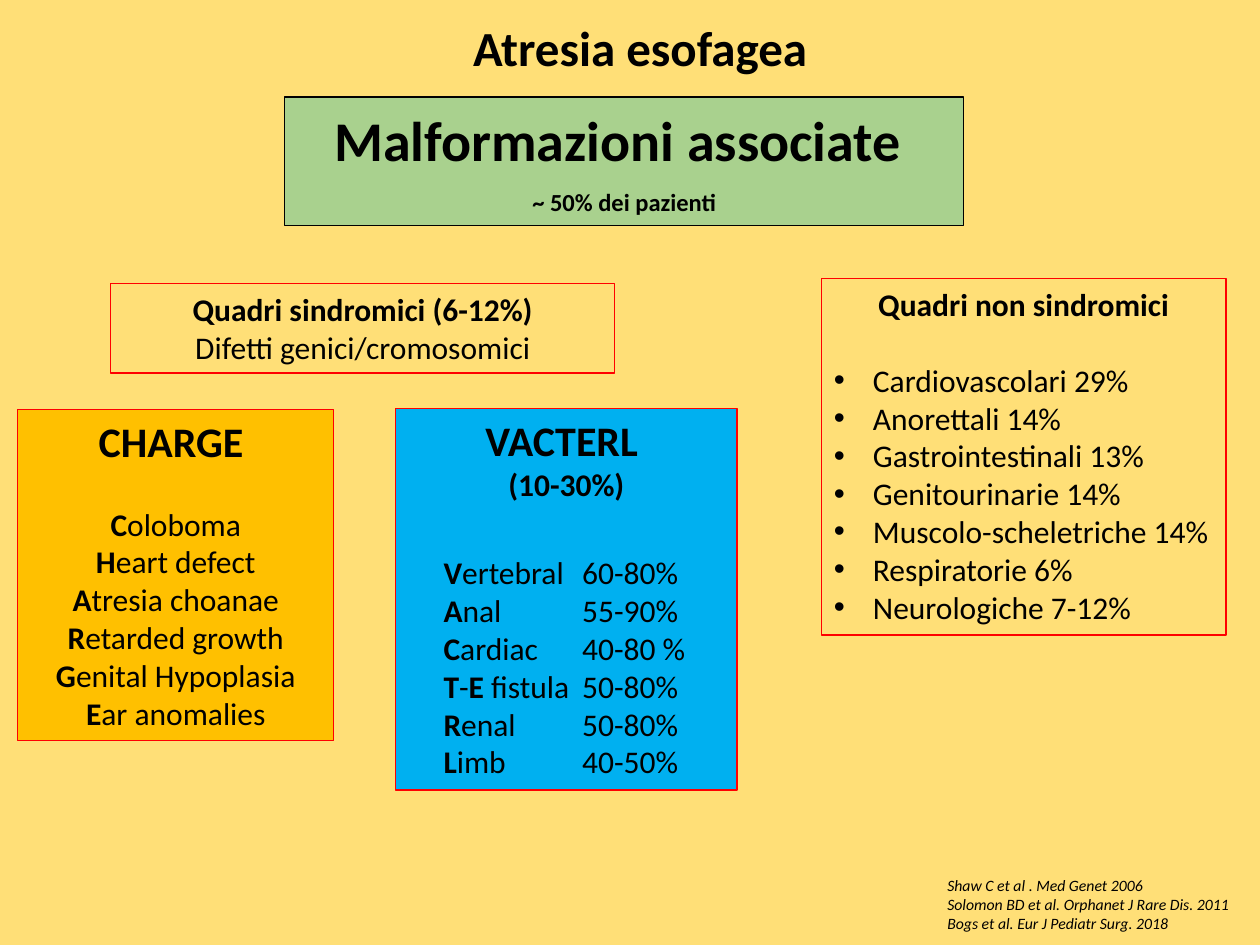
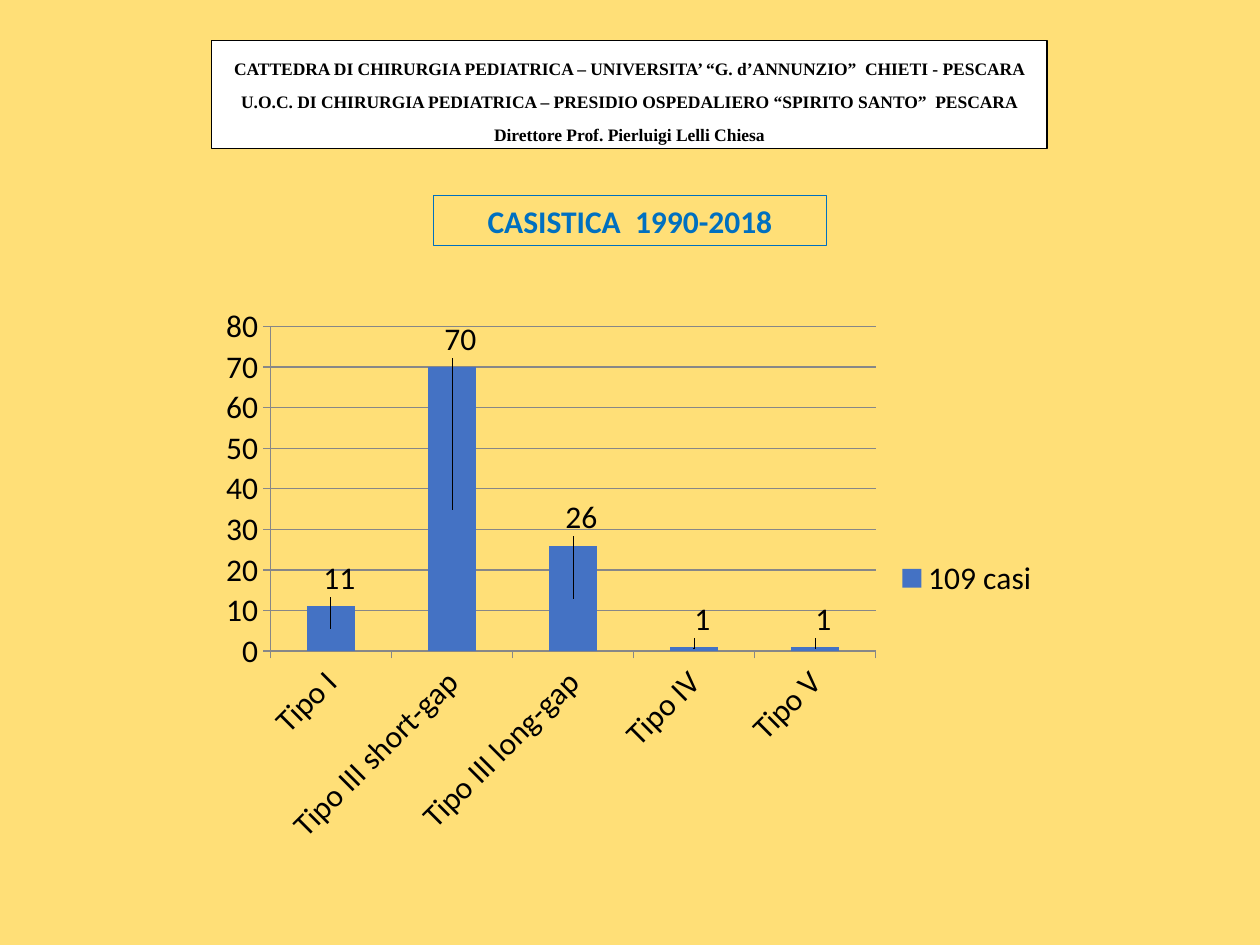
from lxml.etree import SubElement
from pptx import Presentation
from pptx.chart.data import CategoryChartData
from pptx.dml.color import RGBColor
from pptx.enum.chart import XL_CHART_TYPE, XL_LABEL_POSITION, XL_LEGEND_POSITION
from pptx.enum.shapes import MSO_SHAPE
from pptx.enum.text import MSO_ANCHOR, PP_ALIGN
from pptx.oxml import parse_xml
from pptx.oxml.ns import nsdecls, qn
from pptx.util import Inches, Pt

COLORS = {
    "background": "FFDF77",
    "text": "000000",
    "green": "A9D18E",
    "red": "FF0000",
    "sky": "00B0F0",
    "amber": "FFC000",
    "blue": "0070C0",
    "white": "FFFFFF",
    "bar": "4472C4",
    "axis": "878787",
}
BODY_FONT = "Calibri"

HEADING = {"bold": True}
LARGE_HEADING = {"bold": True, "size": 24}
BULLET_INDENT = 0.31
VALUE_TAB = 1.1

# Letters between asterisks are bold.
CHARGE_ITEMS = ["*C*oloboma", "*H*eart defect", "*A*tresia choanae",
                "*R*etarded growth", "*G*enital Hypoplasia", "*E*ar anomalies"]
VACTERL_ITEMS = [
    ("*V*ertebral", "60-80%"),
    ("*A*nal", "55-90%"),
    ("*C*ardiac", "40-80 %"),
    ("*T*-*E* fistula", "50-80%"),
    ("*R*enal", "50-80%"),
    ("*L*imb", "40-50%"),
]
NON_SYNDROMIC_ITEMS = ["Cardiovascolari 29%", "Anorettali 14%", "Gastrointestinali 13%",
                       "Genitourinarie 14%", "Muscolo-scheletriche 14%",
                       "Respiratorie 6%", "Neurologiche 7-12%"]
REFERENCES = ["Shaw C et al . Med Genet 2006",
              "Solomon BD et al. Orphanet J Rare Dis. 2011",
              "Bogs et al. Eur J Pediatr Surg. 2018"]
DEPARTMENT_LINES = [
    "CATTEDRA DI CHIRURGIA PEDIATRICA – UNIVERSITA’ “G. d’ANNUNZIO”  CHIETI - PESCARA",
    "U.O.C. DI CHIRURGIA PEDIATRICA – PRESIDIO OSPEDALIERO “SPIRITO SANTO”  PESCARA",
    "Direttore Prof. Pierluigi Lelli Chiesa",
]
CASES = {"Tipo I": 11, "Tipo III short-gap": 70, "Tipo III long-gap": 26,
         "Tipo IV": 1, "Tipo V": 1}


def item_list(items, gap, **style):
    """Give every item the style, and the first one a gap above it."""
    return [(item, {**style, "before": 0 if index else gap})
            for index, item in enumerate(items)]


MALFORMATION_BOXES = [
    {"at": (2.26, 0.77, 5.39, 1.02), "fill": "green", "line": "text", "top": 0.07,
     "paragraphs": [("Malformazioni associate ", {"bold": True, "size": 32}),
                    ("~ 50% dei pazienti", {"bold": True, "size": 14, "before": 8})]},
    {"at": (2.79, 0.09, 4.58, 0.57),
     "paragraphs": [("Atresia esofagea", {"bold": True, "size": 28})]},
    {"at": (0.88, 2.25, 4, 0.71), "line": "red",
     "paragraphs": [("Quadri sindromici (6-12%)", HEADING),
                    ("Difetti genici/cromosomici", {})]},
    {"at": (6.52, 2.21, 3.21, 2.83), "line": "red",
     "paragraphs": [("Quadri non sindromici", HEADING)]
     + item_list(NON_SYNDROMIC_ITEMS, 22, align=PP_ALIGN.LEFT, bullet=True)},
    {"at": (7.42, 6.9, 2.53, 0.56),
     "paragraphs": item_list(REFERENCES, 0, align=PP_ALIGN.LEFT, size=9, italic=True)},
    {"at": (3.14, 3.24, 2.71, 3.03), "fill": "sky", "line": "red", "side": 0.38,
     "paragraphs": [("VACTERL ", LARGE_HEADING), ("(10-30%)", HEADING)]
     + item_list(["\t".join(row) for row in VACTERL_ITEMS], 29,
                 align=PP_ALIGN.LEFT, tab=VALUE_TAB)},
    {"at": (0.14, 3.25, 2.51, 2.63), "fill": "amber", "line": "red",
     "paragraphs": [("CHARGE ", LARGE_HEADING)] + item_list(CHARGE_ITEMS, 22)},
]
CASE_BOXES = [
    {"at": (3.44, 1.55, 3.12, 0.4), "line": "blue", "anchor": MSO_ANCHOR.MIDDLE,
     "paragraphs": [("CASISTICA  1990-2018", {"bold": True, "color": "blue"})]},
    {"at": (1.68, 0.32, 6.63, 0.86), "fill": "white", "line": "text",
     "paragraphs": item_list(DEPARTMENT_LINES, 0, bold=True, size=10,
                             font="Times New Roman", spacing=1.56)},
]
CHART_AT = (1.68, 2.37, 6.67, 4.44)
PLOT_AREA = {"x": 0.07, "y": 0.05, "w": 0.72, "h": 0.58}
AXIS_MAXIMUM = 80
LABEL_SHIFT = 0.01
LABEL_GAP = 0.05


def color(name):
    return RGBColor.from_string(COLORS[name])


def set_attributes(target, values):
    for name, value in values.items():
        setattr(target, name, value)


def write_paragraph(paragraph, text, style):
    set_attributes(paragraph, {
        "alignment": style.get("align", PP_ALIGN.CENTER),
        "space_before": Pt(style.get("before", 0)),
        "line_spacing": style.get("spacing", 1.0),
    })
    properties = paragraph._p.get_or_add_pPr()
    if style.get("bullet"):
        indent = Inches(BULLET_INDENT)
        properties.set("marL", str(indent))
        properties.set("indent", str(-indent))
        SubElement(properties, qn("a:buFont"), typeface="Arial")
        SubElement(properties, qn("a:buChar"), char="•")
    if "tab" in style:
        tabs = SubElement(properties, qn("a:tabLst"))
        SubElement(tabs, qn("a:tab"), pos=str(Inches(style["tab"])), algn="l")
    for index, piece in enumerate(text.split("*")):
        if not piece:
            continue
        run = paragraph.add_run()
        run.text = piece
        set_attributes(run.font, {
            "name": style.get("font", BODY_FONT),
            "size": Pt(style.get("size", 18)),
            "bold": style.get("bold", False) or index % 2 == 1,
            "italic": style.get("italic", False),
        })
        run.font.color.rgb = color(style.get("color", "text"))


def add_box(slide, box):
    place = [Inches(length) for length in box["at"]]
    if "line" in box:
        shape = slide.shapes.add_shape(MSO_SHAPE.RECTANGLE, *place)
        shape.shadow.inherit = False
        shape.line.color.rgb = color(box["line"])
        shape.line.width = Pt(0.75)
        if "fill" in box:
            shape.fill.solid()
            shape.fill.fore_color.rgb = color(box["fill"])
        else:
            shape.fill.background()
    else:
        shape = slide.shapes.add_textbox(*place)
    frame = shape.text_frame
    side = Inches(box.get("side", 0.1))
    set_attributes(frame, {
        "word_wrap": True,
        "vertical_anchor": box.get("anchor", MSO_ANCHOR.TOP),
        "margin_left": side,
        "margin_right": side,
        "margin_top": Inches(box.get("top", 0.05)),
        "margin_bottom": Inches(0.05),
    })
    for index, (text, style) in enumerate(box["paragraphs"]):
        paragraph = frame.add_paragraph() if index else frame.paragraphs[0]
        write_paragraph(paragraph, text, style)


def manual_layout(values, inner=False):
    target = '<c:layoutTarget val="inner"/>' if inner else ""
    modes = '<c:xMode val="edge"/><c:yMode val="edge"/>' if inner else ""
    sizes = "".join(f'<c:{name} val="{value}"/>' for name, value in values.items())
    return parse_xml(f'<c:layout {nsdecls("c")}><c:manualLayout>'
                     f"{target}{modes}{sizes}</c:manualLayout></c:layout>")


def add_case_chart(slide):
    data = CategoryChartData()
    data.categories = list(CASES)
    data.add_series("109 casi", list(CASES.values()))
    place = [Inches(length) for length in CHART_AT]
    chart = slide.shapes.add_chart(XL_CHART_TYPE.COLUMN_STACKED, *place, data).chart
    set_attributes(chart.font, {"name": BODY_FONT, "size": Pt(18)})
    chart.font.color.rgb = color("text")
    chart.has_title = False
    chart.has_legend = True
    set_attributes(chart.legend, {"position": XL_LEGEND_POSITION.RIGHT,
                                  "include_in_layout": False})

    set_attributes(chart.value_axis, {"minimum_scale": 0, "maximum_scale": AXIS_MAXIMUM,
                                      "major_unit": 10, "has_major_gridlines": True})
    for line in (chart.value_axis.format.line, chart.category_axis.format.line,
                 chart.value_axis.major_gridlines.format.line):
        line.color.rgb = color("axis")
        line.width = Pt(0.75)
    chart.category_axis.tick_labels.font.size = Pt(18)
    category_text = chart.element.find(f'.//{qn("c:catAx")}/{qn("c:txPr")}/{qn("a:bodyPr")}')
    category_text.set("rot", str(-45 * 60000))

    plot = chart.plots[0]
    set_attributes(plot, {"gap_width": 150, "overlap": 100, "vary_by_categories": False})
    series = plot.series[0]
    series.format.fill.solid()
    series.format.fill.fore_color.rgb = color("bar")
    for index in range(len(CASES)):
        series.points[index].data_label.position = XL_LABEL_POSITION.CENTER
    # Labels start at the bar's centre and are lifted to just above its top.
    for label, value in zip(chart.element.iter(qn("c:dLbl")), CASES.values()):
        half_bar = value / AXIS_MAXIMUM * PLOT_AREA["h"] / 2
        label.insert(1, manual_layout({"x": LABEL_SHIFT, "y": -(half_bar + LABEL_GAP)}))

    plot_area = chart.element.find(f'.//{qn("c:plotArea")}')
    for layout in plot_area.findall(qn("c:layout")):
        plot_area.remove(layout)
    plot_area.insert(0, manual_layout(PLOT_AREA, inner=True))


def add_slide(presentation, boxes):
    slide = presentation.slides.add_slide(presentation.slide_layouts[6])
    slide.background.fill.solid()
    slide.background.fill.fore_color.rgb = color("background")
    for box in boxes:
        add_box(slide, box)
    return slide


def main():
    presentation = Presentation()
    presentation.slide_width = Inches(10)
    presentation.slide_height = Inches(7.5)
    add_slide(presentation, MALFORMATION_BOXES)
    add_case_chart(add_slide(presentation, CASE_BOXES))
    presentation.save("out.pptx")


if __name__ == "__main__":
    main()
